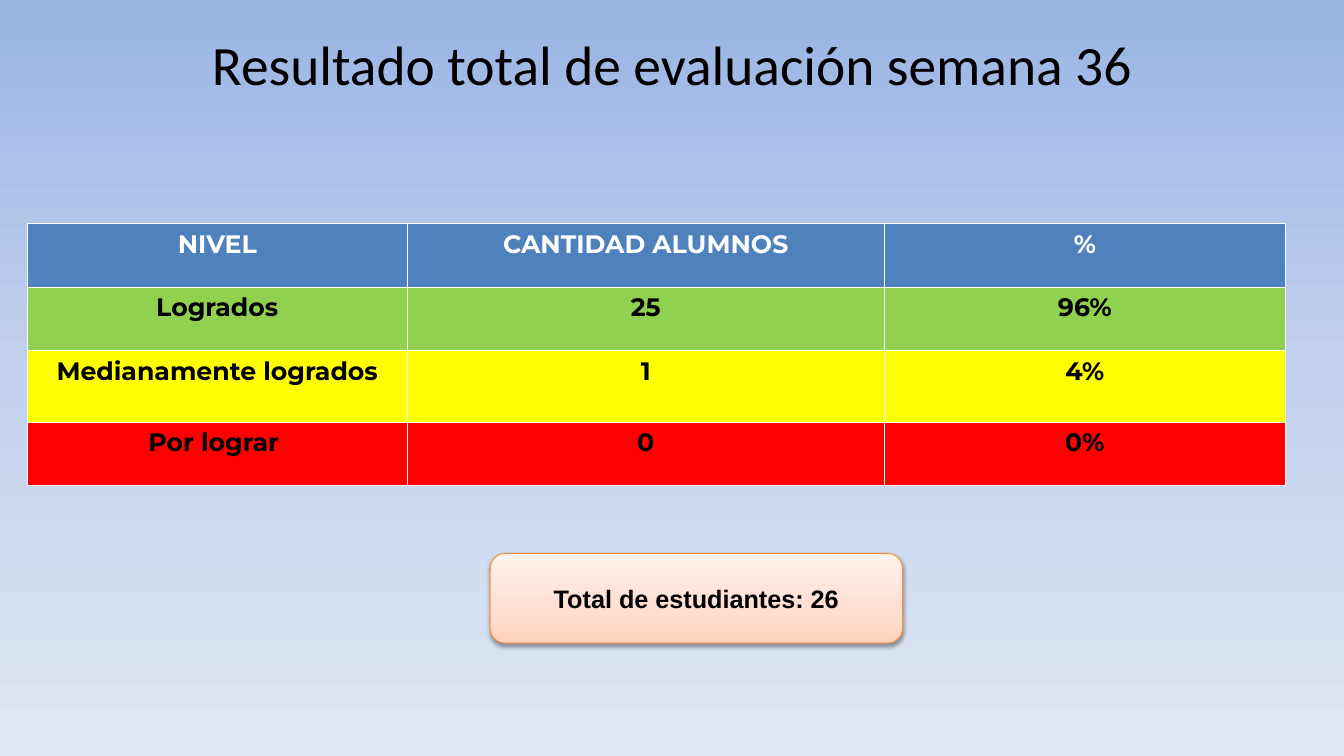
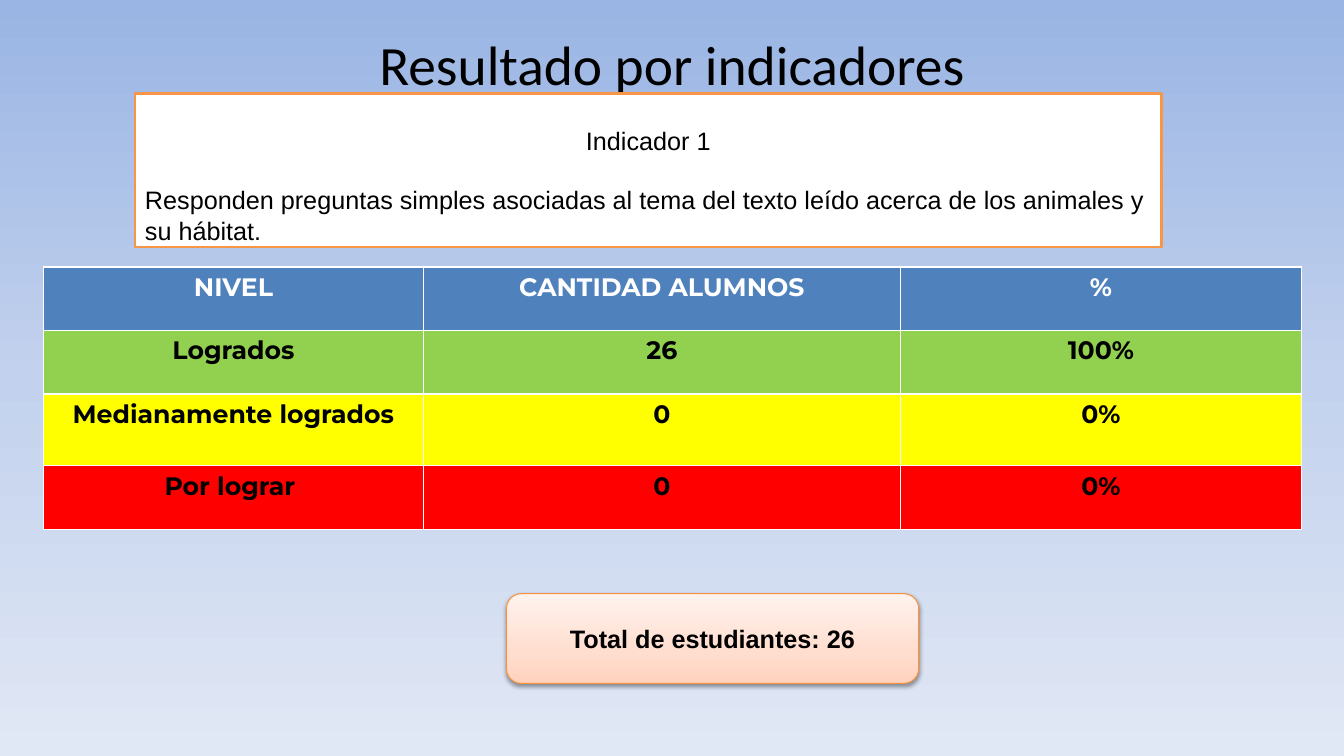
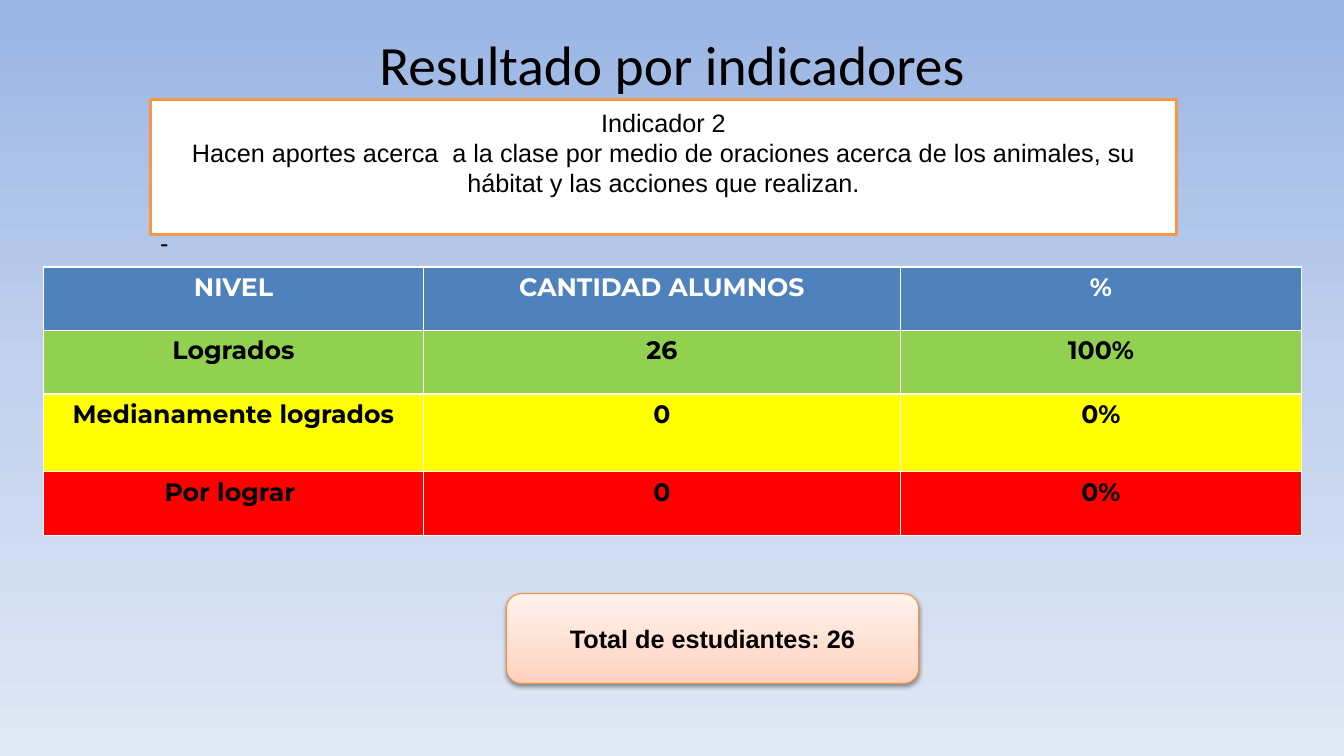
from dataclasses import dataclass

from lxml.etree import SubElement
from pptx import Presentation
from pptx.dml.color import RGBColor
from pptx.dml.fill import FillFormat
from pptx.enum.shapes import MSO_SHAPE
from pptx.enum.text import MSO_ANCHOR, MSO_AUTO_SIZE, PP_ALIGN
from pptx.oxml.ns import qn
from pptx.oxml.xmlchemy import BaseOxmlElement
from pptx.shapes.autoshape import Shape
from pptx.slide import Slide
from pptx.text.text import _Paragraph as Para
from pptx.util import Inches, Length, Pt

Stops = tuple[tuple[int, str], ...]


@dataclass(frozen=True)
class Theme:
    black: str = "000000"
    white: str = "FFFFFF"
    head: str = "4F81BD"
    levels: tuple[str, ...] = ("92D050", "FFFF00", "FF0000")
    note_line: str = "F79646"
    total_line: str = "F69240"
    sky: Stops = ((0, "9AB5E4"), (50, "C2D1ED"), (100, "E1E8F5"))
    peach: Stops = ((0, "FFD2BD"), (35, "FFDED0"), (100, "FFF2ED"))
    title_font: str = "Calibri"
    table_font: str = "Montserrat"
    body_font: str = "Arial"
    title_size: float = 39.6
    body_size: float = 18


@dataclass(frozen=True)
class Box:
    """Left, top, width and height in hundredths of the slide."""
    x: float
    y: float
    w: float
    h: float

    def place(self) -> tuple[Length, Length, Length, Length]:
        return col(self.x), row(self.y), col(self.w), row(self.h)


@dataclass(frozen=True)
class Line:
    text: str
    align: PP_ALIGN = PP_ALIGN.CENTER
    gap: float = 0


@dataclass(frozen=True)
class Note:
    box: Box
    inset: float
    lines: tuple[Line, ...]


@dataclass(frozen=True)
class Page:
    title: str
    left: float
    top: float
    total_top: float
    counts: tuple[tuple[str, str], ...]
    mid_row: float = 9.47
    note: Note | None = None


THEME = Theme()
WIDE, HIGH = 13.33, 7.5
TITLE = Box(5, 4, 90, 16.67)
COLS = (28.28, 35.48, 29.86)
ROW = 8.4
TOTAL_SHIFT, TOTAL_W, TOTAL_H = 34.45, 30.68, 11.87
HEADS = ("NIVEL", "CANTIDAD ALUMNOS", "%")
LEVELS = ("Logrados", "Medianamente logrados", "Por lograr ")
FULL = (("26", "100%"), ("0", "0%"), ("0", "0%"))
NAME = "Resultado por indicadores"

PAGES = (
    Page("Resultado total de evaluación semana 36", 2.03, 29.6, 73.2,
         (("25", "96%"), ("1", "4%"), ("0", "0%"))),
    Page(NAME, 3.23, 35.33, 78.53, FULL, note=Note(
        Box(10.05, 12.4, 76.37, 20.27), 0.31, (
            Line("Indicador 1"),
            Line("Responden preguntas simples asociadas al tema del texto leído "
                 "acerca de los animales y su hábitat.", PP_ALIGN.LEFT, 21)))),
    Page(NAME, 3.23, 35.33, 78.53, FULL, 10.27, Note(
        Box(11.18, 13.2, 76.37, 17.87), 0.07, (
            Line("Indicador 2"),
            Line("Hacen aportes acerca  a la clase por medio de oraciones acerca "
                 "de los animales, su hábitat y las acciones que realizan."),
            Line("-", PP_ALIGN.LEFT, 21)))),
)


def col(n: float) -> Length:
    return Inches(WIDE * n / 100)


def row(n: float) -> Length:
    return Inches(HIGH * n / 100)


def rgb(tone: str) -> RGBColor:
    return RGBColor.from_string(tone)


def write(para: Para, text: str, font: str, size: float, tone: str = THEME.black,
          bold: bool = False, align: PP_ALIGN = PP_ALIGN.CENTER) -> None:
    para.alignment = align
    run = para.add_run()
    run.text = text
    run.font.name = font
    run.font.size = Pt(size)
    run.font.bold = bold
    run.font.color.rgb = rgb(tone)


def blend(fill: FillFormat, root: BaseOxmlElement, stops: Stops, angle: int) -> None:
    """Fill with a gradient; root is the element that holds the fill."""
    fill.gradient()
    fill.gradient_angle = angle
    items = root.find(".//" + qn("a:gsLst"))
    items.clear()
    for share, tone in stops:
        stop = SubElement(items, qn("a:gs"), pos=str(share * 1000))
        SubElement(stop, qn("a:srgbClr"), val=tone)


def shade(shape: Shape) -> None:
    effects = shape.element.spPr.find(qn("a:effectLst"))
    drop = SubElement(effects, qn("a:outerShdw"), blurRad=str(Pt(3.1)),
                      dist=str(Pt(1.6)), dir="5400000", rotWithShape="0")
    tone = SubElement(drop, qn("a:srgbClr"), val=THEME.black)
    SubElement(tone, qn("a:alpha"), val="38000")


def add_box(slide: Slide, kind: MSO_SHAPE, box: Box, edge: str, width: float) -> Shape:
    shape = slide.shapes.add_shape(kind, *box.place())
    shape.shadow.inherit = False
    shape.line.color.rgb = rgb(edge)
    shape.line.width = Pt(width)
    shape.text_frame.word_wrap = True
    return shape


def add_title(slide: Slide, text: str) -> None:
    title = slide.shapes.title
    title.left, title.top, title.width, title.height = TITLE.place()
    frame = title.text_frame
    frame.auto_size = MSO_AUTO_SIZE.NONE
    frame.vertical_anchor = MSO_ANCHOR.TOP
    frame.margin_top = 0
    write(frame.paragraphs[0], text, THEME.title_font, THEME.title_size)


def add_levels(slide: Slide, page: Page) -> None:
    rows = (HEADS, *((name, *pair) for name, pair in zip(LEVELS, page.counts)))
    highs = (ROW, ROW, page.mid_row, ROW)
    box = Box(page.left, page.top, sum(COLS), sum(highs))
    table = slide.shapes.add_table(len(rows), len(COLS), *box.place()).table
    table.horz_banding = False
    for column, width in zip(table.columns, COLS):
        column.width = col(width)
    for r, (texts, high, fill) in enumerate(zip(rows, highs, (THEME.head, *THEME.levels))):
        table.rows[r].height = row(high)
        for c, text in enumerate(texts):
            cell = table.cell(r, c)
            cell.margin_left = cell.margin_right = Inches(0.17)
            cell.fill.solid()
            cell.fill.fore_color.rgb = rgb(fill)
            write(cell.text_frame.paragraphs[0], text, THEME.table_font,
                  THEME.body_size, THEME.black if r else THEME.white, True)


def add_total(slide: Slide, page: Page) -> None:
    box = Box(page.left + TOTAL_SHIFT, page.total_top, TOTAL_W, TOTAL_H)
    shape = add_box(slide, MSO_SHAPE.ROUNDED_RECTANGLE, box, THEME.total_line, 0.75)
    blend(shape.fill, shape.element.spPr, THEME.peach, 90)
    shade(shape)
    shape.text_frame.vertical_anchor = MSO_ANCHOR.MIDDLE
    write(shape.text_frame.paragraphs[0], "Total de estudiantes: 26",
          THEME.body_font, THEME.body_size, bold=True)


def add_note(slide: Slide, note: Note) -> None:
    shape = add_box(slide, MSO_SHAPE.RECTANGLE, note.box, THEME.note_line, 2)
    shape.fill.solid()
    shape.fill.fore_color.rgb = rgb(THEME.white)
    frame = shape.text_frame
    frame.vertical_anchor = MSO_ANCHOR.TOP
    frame.margin_top = Inches(note.inset)
    frame.margin_bottom = 0
    for i, line in enumerate(note.lines):
        para = frame.add_paragraph() if i else frame.paragraphs[0]
        para.space_before = Pt(line.gap)
        write(para, line.text, THEME.body_font, THEME.body_size, align=line.align)


def main() -> None:
    deck = Presentation()
    deck.slide_width, deck.slide_height = col(100), row(100)
    master = deck.slide_master
    blend(master.background.fill, master.element, THEME.sky, 270)
    for page in PAGES:
        slide = deck.slides.add_slide(deck.slide_layouts.get_by_name("Title Only"))
        add_title(slide, page.title)
        add_levels(slide, page)
        add_total(slide, page)
        if page.note:
            add_note(slide, page.note)
    deck.save("out.pptx")


if __name__ == "__main__":
    main()
